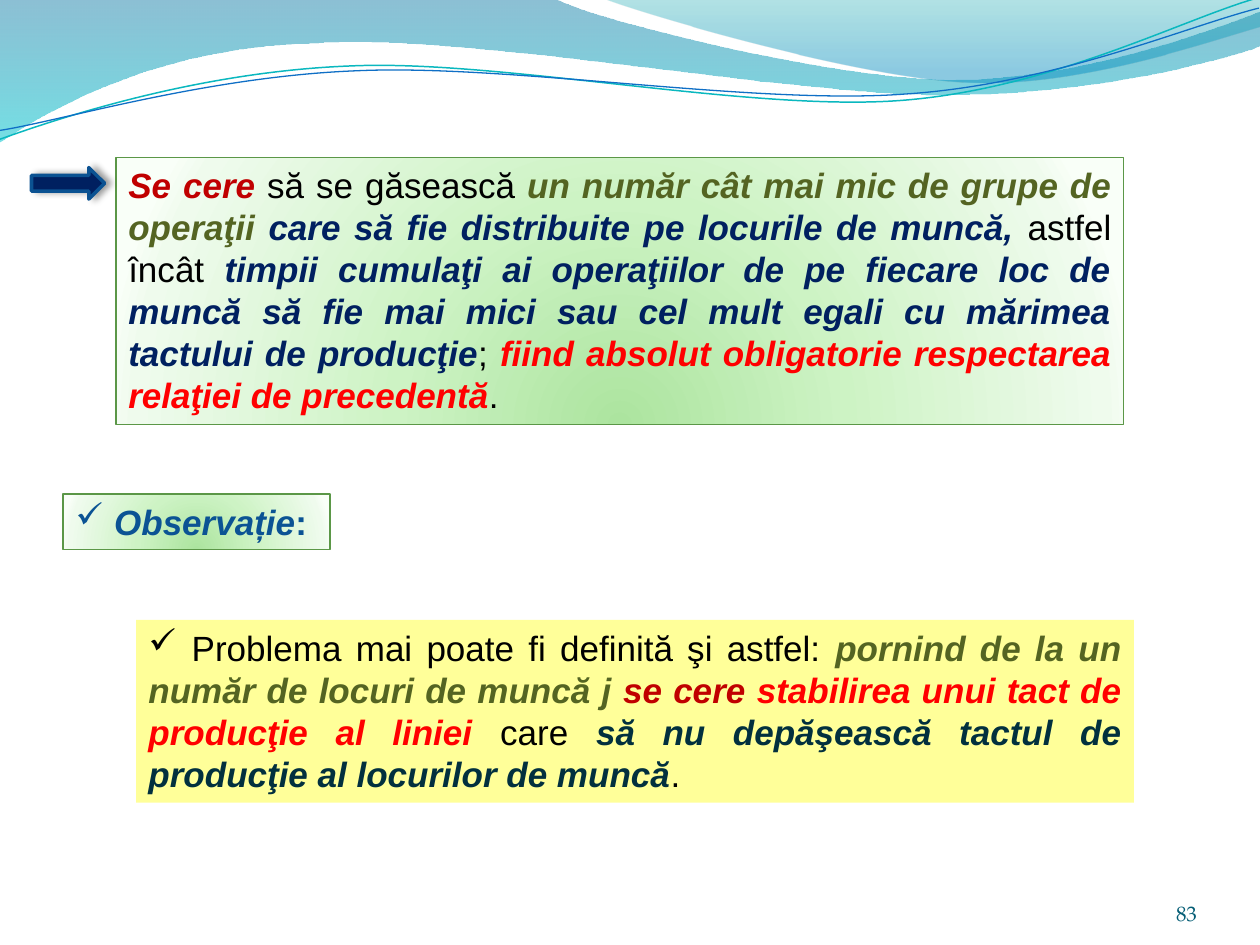
"""Build the slide that restates the line-balancing problem."""
from lxml import etree
from pptx import Presentation, util as u
from pptx.dml.color import RGBColor
from pptx.enum import shapes, text
from pptx.oxml import parse_xml
from pptx.oxml.ns import nsdecls, qn


def paint(shape, fill=None, line=None, width=0.75, direction="", shadow=None):
    shape.shadow.inherit = False
    shape.fill.background()
    if isinstance(fill, str):
        shape.fill.solid()
        shape.fill.fore_color.rgb = RGBColor.from_string(fill)
    elif fill:
        stops = "".join(
            f'<a:gs pos="{place * 1000}"><a:srgbClr val="{color}">'
            f'<a:alpha val="{alpha * 1000}"/></a:srgbClr></a:gs>'
            for place, color, alpha in fill)
        properties = shape._element.spPr
        properties.replace(properties.find(qn("a:noFill")), parse_xml(
            f'<a:gradFill {nsdecls("a")} rotWithShape="1"><a:gsLst>{stops}</a:gsLst>{direction}</a:gradFill>'))
    if line:
        shape.line.color.rgb = RGBColor.from_string(line)
        shape.line.width = u.Pt(width)
    else:
        shape.line.fill.background()
    if shadow:
        color, alpha, blur, distance, angle = shadow
        shape._element.spPr.find(qn("a:effectLst")).append(parse_xml(
            f'<a:outerShdw {nsdecls("a")} blurRad="{u.Pt(blur)}" dist="{u.Pt(distance)}" '
            f'dir="{angle * 60000}" algn="ctr" rotWithShape="0"><a:srgbClr val="{color}">'
            f'<a:alpha val="{alpha * 1000}"/></a:srgbClr></a:outerShdw>'))


def write(shape, spans, size=20, font="Arial", align="LEFT", anchor="TOP", wrap=True, check=False):
    frame = shape.text_frame
    frame.word_wrap = wrap
    frame.vertical_anchor = text.MSO_ANCHOR[anchor]
    para = frame.paragraphs[0]
    para.alignment = text.PP_ALIGN[align]
    if check:
        properties = para._p.get_or_add_pPr()
        etree.SubElement(properties, qn("a:buFont"), typeface="Wingdings", pitchFamily="2", charset="2")
        etree.SubElement(properties, qn("a:buChar"), char="ü")
    for words, color, style in spans:
        span = para.add_run()
        span.text = words
        span.font.name = font
        span.font.size = u.Pt(size)
        span.font.bold = "b" in style
        span.font.italic = "i" in style
        span.font.color.rgb = RGBColor.from_string(color)


deck = Presentation()
deck.slide_width, deck.slide_height = u.Inches(10), u.Inches(7.5)
page = deck.slides.add_slide(deck.slide_layouts[6])

DOWN = '<a:lin ang="5400000" scaled="0"/>'
GLOW = '<a:path path="circle"><a:fillToRect l="50000" t="130000" r="50000" b="-30000"/></a:path>'
GREEN = [(0, "ACE49F", 100), (43, "CDF3C4", 100), (93, "EFFBED", 100), (100, "F9FFF8", 100)]
GREEN_BOX = dict(fill=GREEN, line="5B9747", direction=GLOW)

waves = [
    ((0, 0), [(4.4, -0.01), (4.76, 0.17, 6.64, 0.63, 7.58, 0.63), (8.53, 0.63, 9.58, 0.26, 10, 0.09),
              (10.01, 0.36), (9.83, 0.44, 8.7, 0.76, 7.46, 0.75), (6.22, 0.75, 3.82, 0.28, 2.57, 0.34),
              (1.29, 0.36, 0.46, 0.83, -0.01, 1.13), (0, 0)],
     0, dict(fill=[(0, "0074A1", 45), (100, "00C6CF", 55)], direction=DOWN)),
    ((4.79, -0.01), [(5.09, 0.11, 6.82, 0.62, 7.69, 0.65), (8.56, 0.69, 9.61, 0.32, 10, 0.21),
                     (10, 0), (4.79, -0.01)],
     0, dict(fill=[(0, "00A1A9", 30), (80, "008BBF", 45)], direction=DOWN)),
    ((-0.02, 0.87), [(0.47, 0.72, 1.58, 0.41, 2.78, 0.42), (3.96, 0.42, 5.91, 0.93, 7.12, 0.9),
                     (8.32, 0.87, 9.4, 0.36, 10, 0.22)],
     -2.7, dict(line="0AB8BF", width=0.85)),
    ((-0.02, 0.8), [(0.46, 0.75, 1.64, 0.45, 2.83, 0.46), (4.03, 0.46, 5.96, 0.88, 7.16, 0.85),
                    (8.35, 0.83, 9.42, 0.42, 10.01, 0.3)],
     -2.7, dict(line="0F6FC6")),
]
for start, segments, angle, look in waves:
    points = [pair for segment in segments for pair in zip(segment[::2], segment[1::2])]
    builder = page.shapes.build_freeform(u.Inches(start[0]), u.Inches(start[1]))
    builder.add_line_segments([(u.Inches(x), u.Inches(y)) for x, y in points], close="fill" in look)
    wave = builder.convert_to_shape()
    wave.rotation = angle
    corners = iter(list(wave._element.iter(qn("a:lnTo"))))
    for segment in segments:
        first = next(corners)
        if len(segment) == 6:
            first.tag = qn("a:cubicBezTo")
            for control in (next(corners), next(corners)):
                first.append(control[0])
                control.getparent().remove(control)
    paint(wave, **look)

number = page.shapes.add_textbox(u.Inches(8.67), u.Inches(6.95), u.Inches(0.83), u.Inches(0.4))
frame = number.text_frame
frame.margin_left = frame.margin_top = frame.margin_right = frame.margin_bottom = 0
write(number, [("83", "045D75", "")], size=12, font="TeX Gyre Pagella", align="RIGHT", anchor="BOTTOM")

requirement = [
    ("Se cere ", "C00000", "bi"),
    ("să se găsească ", "000000", ""),
    ("un număr cât mai mic de grupe de operaţii ", "546422", "bi"),
    ("care să fie distribuite pe locurile de muncă, ", "002060", "bi"),
    ("astfel încât ", "000000", ""),
    ("timpii cumulaţi ai operaţiilor de pe fiecare loc de muncă să fie mai mici sau "
     "cel mult egali cu mărimea tactului de producţie", "002060", "bi"),
    ("; ", "000000", ""),
    ("fiind absolut obligatorie respectarea relaţiei de precedentă", "FF0000", "bi"),
    (".", "000000", ""),
]
remark = [(" Observație", "0B5394", "bi"), (":", "0B5394", "b")]
alternative = [
    (" Problema mai poate fi definită şi astfel: ", "000000", ""),
    ("pornind de la un număr de locuri de muncă j ", "546422", "bi"),
    ("se cere ", "C00000", "bi"),
    ("stabilirea unui tact de producţie al liniei", "FF0000", "bi"),
    (" care ", "000000", ""),
    ("să nu depăşească tactul de producţie al locurilor de muncă", "02303E", "bi"),
    (".", "000000", ""),
]
boxes = [
    ((0.92, 1.25, 8, 2.12), GREEN_BOX, requirement, dict(align="JUSTIFY")),
    ((0.5, 3.92, 2.12, 0.44), GREEN_BOX, remark, dict(wrap=False, check=True)),
    ((1.08, 4.92, 7.92, 1.45), dict(fill="FFFF99"), alternative, dict(align="JUSTIFY", check=True)),
]
for place, look, spans, layout in boxes:
    box = page.shapes.add_shape(shapes.MSO_SHAPE.RECTANGLE, *map(u.Inches, place))
    paint(box, **look)
    write(box, spans, **layout)
    box.text_frame.auto_size = text.MSO_AUTO_SIZE.SHAPE_TO_FIT_TEXT

arrow = page.shapes.add_shape(shapes.MSO_SHAPE.RIGHT_ARROW,
                              u.Inches(0.25), u.Inches(1.33), u.Inches(0.58), u.Inches(0.25))
paint(arrow, fill="002060", line="0B5292", width=2, shadow=("000000", 40, 4, 3, 0))

deck.save("out.pptx")
